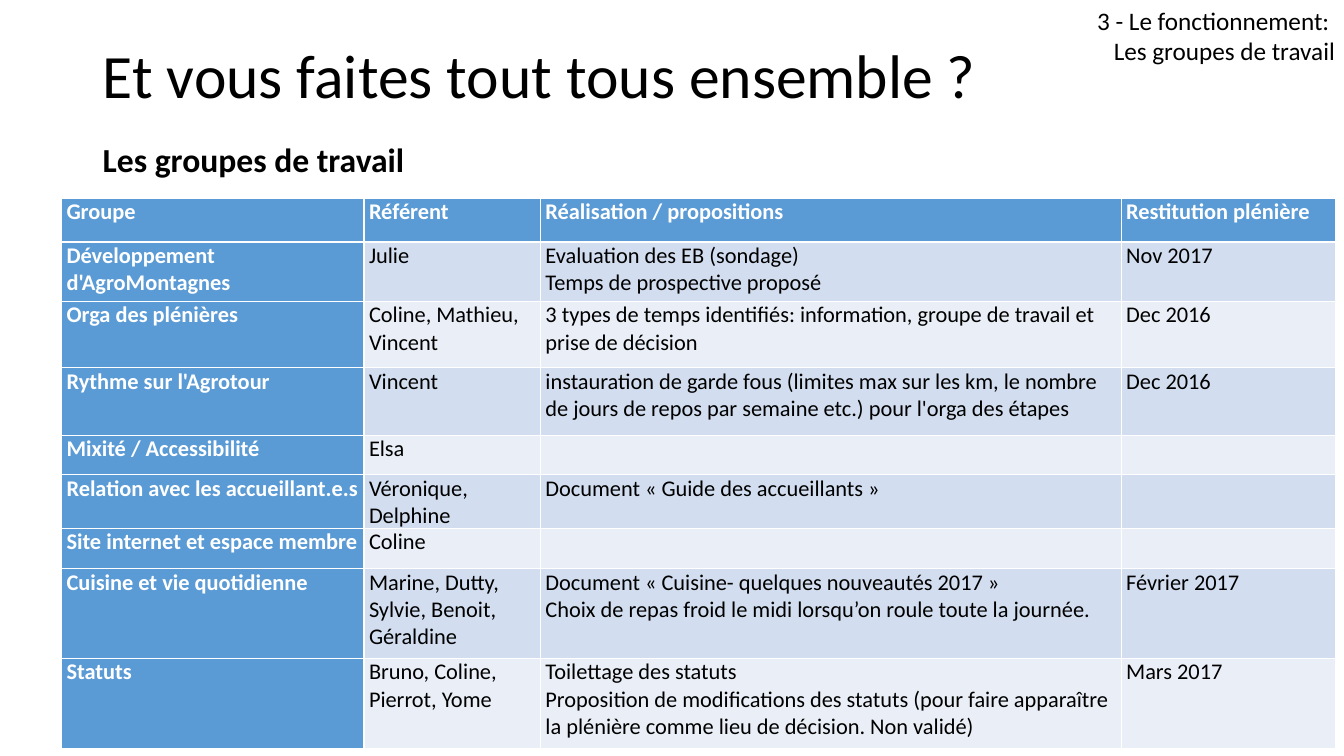
"""Build the slide that lists the working groups and what each has delivered."""
from pptx import Presentation
from pptx.dml.color import RGBColor
from pptx.enum.text import MSO_ANCHOR, MSO_AUTO_SIZE, PP_ALIGN
from pptx.util import Inches, Pt

LEFT, RIGHT = PP_ALIGN.LEFT, PP_ALIGN.RIGHT
TOP = MSO_ANCHOR.TOP
NO_FIT, GROW = MSO_AUTO_SIZE.NONE, MSO_AUTO_SIZE.SHAPE_TO_FIT_TEXT
FONT = "Calibri"
BLACK, WHITE = "000000", "FFFFFF"
BLUE = "5B9BD5"
BANDS = ["D2DEEF", "EAEFF7"]
TITLE_ONLY = 5


def color(value):
    return RGBColor.from_string(value)


def write(frame, lines, size, ink=BLACK, bold=False, align=LEFT):
    for index, line in enumerate(lines):
        para = frame.add_paragraph() if index else frame.paragraphs[0]
        para.alignment = align
        span = para.add_run()
        span.text = line
        span.font.name = FONT
        span.font.size = Pt(size)
        span.font.bold = bold
        span.font.color.rgb = color(ink)


deck = Presentation()
deck.slide_width, deck.slide_height = Inches(13.33), Inches(7.5)
page = deck.slides.add_slide(deck.slide_layouts[TITLE_ONLY])

title = page.shapes.title
title.left, title.top = Inches(0.92), Inches(0.4)
title.width, title.height = Inches(11.5), Inches(1.45)
title.text_frame.vertical_anchor = TOP
title.text_frame.auto_size = NO_FIT
write(title.text_frame, ["Et vous faites tout tous ensemble ?"], 44)
title.text_frame.paragraphs[0].line_spacing = 0.9

section = page.shapes.add_textbox(Inches(10.04), 0, Inches(3.3), Inches(0.71))
section.text_frame.word_wrap = True
section.text_frame.auto_size = GROW
write(section.text_frame, ["3 - Le fonctionnement: ", "Les groupes de travail"], 18, align=RIGHT)

column_widths = [3, 1.75, 5.76, 2.13]
row_heights = [0.43, 0.59, 0.66, 0.67, 0.39, 0.51, 0.4, 0.89, 0.89]
groups = [
    ["Groupe", "Référent", "Réalisation / propositions", "Restitution plénière"],
    ["Développement d'AgroMontagnes", "Julie",
     "Evaluation des EB (sondage)\nTemps de prospective proposé", "Nov 2017"],
    ["Orga des plénières", "Coline, Mathieu, Vincent",
     "3 types de temps identifiés: information, groupe de travail et prise de décision",
     "Dec 2016"],
    ["Rythme sur l'Agrotour", "Vincent",
     "instauration de garde fous (limites max sur les km, le nombre de jours de repos "
     "par semaine etc.) pour l'orga des étapes", "Dec 2016"],
    ["Mixité / Accessibilité", "Elsa", "", ""],
    ["Relation avec les accueillant.e.s", "Véronique, Delphine",
     "Document « Guide des accueillants »", ""],
    ["Site internet et espace membre", "Coline", "", ""],
    ["Cuisine et vie quotidienne", "Marine, Dutty, Sylvie, Benoit, Géraldine",
     "Document « Cuisine- quelques nouveautés 2017 »\n"
     "Choix de repas froid le midi lorsqu’on roule toute la journée.", "Février 2017"],
    ["Statuts", "Bruno, Coline, Pierrot, Yome",
     "Toilettage des statuts\nProposition de modifications des statuts (pour faire "
     "apparaître la plénière comme lieu de décision. Non validé)", "Mars 2017"],
]

table = page.shapes.add_table(
    len(groups), len(column_widths), Inches(0.61), Inches(1.97),
    Inches(sum(column_widths)), Inches(sum(row_heights))).table
table.first_col = True
for column, width in zip(table.columns, column_widths):
    column.width = Inches(width)
for row, height in zip(table.rows, row_heights):
    row.height = Inches(height)

for row_index, group in enumerate(groups):
    for column_index, text in enumerate(group):
        cell = table.cell(row_index, column_index)
        heading = row_index == 0 or column_index == 0
        cell.margin_left = cell.margin_right = Inches(0.05)
        cell.margin_top = cell.margin_bottom = 0
        cell.fill.solid()
        cell.fill.fore_color.rgb = color(BLUE if heading else BANDS[(row_index - 1) % 2])
        if text:
            write(cell.text_frame, text.split("\n"), 16, WHITE if heading else BLACK, heading)

subtitle = page.shapes.add_textbox(Inches(0.92), Inches(1.33), Inches(3.22), Inches(0.5))
subtitle.text_frame.word_wrap = False
subtitle.text_frame.auto_size = GROW
write(subtitle.text_frame, ["Les groupes de travail"], 24, bold=True)

deck.save("out.pptx")
